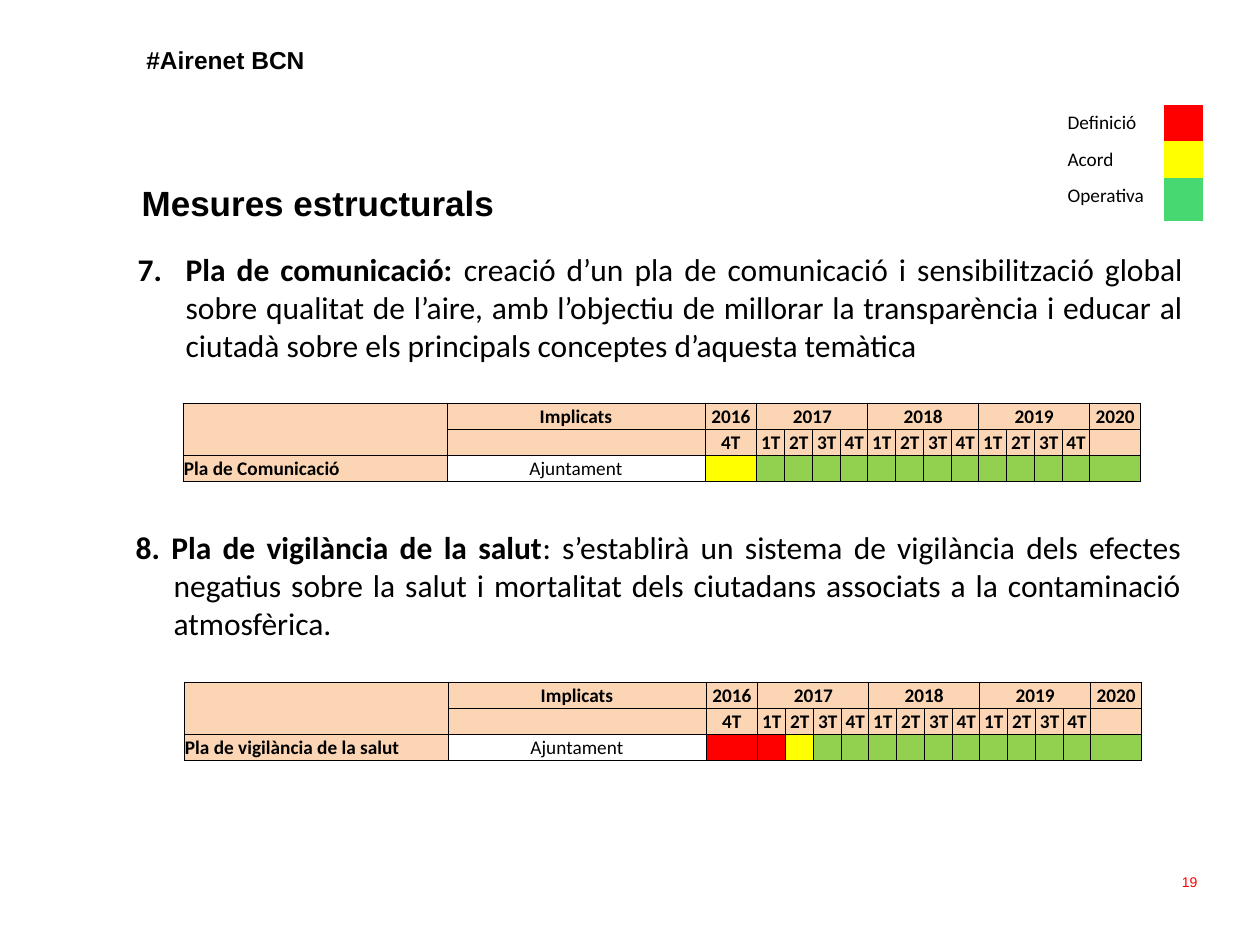
from pptx import Presentation
from pptx.dml.color import RGBColor as Rgb
from pptx.enum.text import MSO_ANCHOR as Anchor, MSO_AUTO_SIZE as Auto, PP_ALIGN as Align
from pptx.oxml.ns import qn
from pptx.util import Emu, Pt
from lxml.etree import SubElement as Sub

HUES = {"ink": "000000", "red": "FF0000", "yellow": "FFFF00", "mint": "47D872",
        "green": "92D050", "peach": "FCD5B4"}
PLAIN = "{2D5ABB26-0587-4C30-8999-92F81FD0307C}"

HEAD = "#Airenet BCN"
TITLE = "Mesures estructurals"
PAGE = "19"
KEY = [("Definició", "red"), ("Acord", "yellow"), ("Operativa", "mint")]
ITEMS = [
    {"box": (125, 244, 1071, 204), "hang": 48, "start": 7, "runs": [
        ("Pla de comunicació: ", True),
        ("creació d’un pla de comunicació i sensibilització global sobre qualitat de l’aire, "
         "amb l’objectiu de millorar la transparència i educar al ciutadà sobre els principals "
         "conceptes d’aquesta temàtica", False)]},
    {"box": (123, 522, 1071, 165), "hang": 38, "start": None, "runs": [
        ("8. Pla de vigilància de la salut", True),
        (": s’establirà un sistema de vigilància dels efectes negatius sobre la salut i "
         "mortalitat dels ciutadans associats a la contaminació atmosfèrica.", False)]},
]
PLANS = [
    {"at": (183, 403), "name": "Pla de Comunicació", "who": "Ajuntament",
     "steps": ["yellow"] + ["green"] * 13},
    {"at": (184, 682), "name": "Pla de vigilància de la salut", "who": "Ajuntament",
     "steps": ["red"] * 2 + ["yellow"] + ["green"] * 11},
]
YEARS = ["2017", "2018", "2019"]
TERMS = ["1T", "2T", "3T", "4T"]
WIDE = [264, 258, 52] + [28, 28, 28, 27] * len(YEARS) + [51]
ROW = 26


def px(n):
    return Emu(round(n * 914400 / 126))


def write(para, runs, size, face, hue="ink"):
    for text, bold in runs:
        run = para.add_run()
        run.text = text
        font = run.font
        font.size, font.name, font.bold = Pt(size), face, bold
        font.color.rgb = Rgb.from_string(HUES[hue])


def place(shape, box, anchor=Anchor.TOP):
    shape.left, shape.top, shape.width, shape.height = map(px, box)
    frame = shape.text_frame
    frame.word_wrap = True
    frame.auto_size = Auto.NONE
    frame.vertical_anchor = anchor
    return frame.paragraphs[0]


def label(shape, box, text, size):
    para = place(shape, box)
    para.alignment = Align.LEFT
    para.line_spacing = Pt(24)
    write(para, [(text, True)], size, "Arial")


def grid(slide, at, rows, cols):
    frame = slide.shapes.add_table(len(rows), len(cols), *map(px, (*at, sum(cols), sum(rows))))
    table = frame.table
    table.first_row = table.horz_banding = False
    table._tbl.tblPr.find(qn("a:tableStyleId")).text = PLAIN
    for row, high in zip(table.rows, rows):
        row.height = px(high)
    for col, wide in zip(table.columns, cols):
        col.width = px(wide)
    return table


def paint(cell, text="", hue=None, bold=False, align=Align.LEFT):
    if hue:
        cell.fill.solid()
        cell.fill.fore_color.rgb = Rgb.from_string(HUES[hue])
    else:
        cell.fill.background()
    para = cell.text_frame.paragraphs[0]
    para.alignment = align
    if text:
        write(para, [(text, bold)], 11, "Calibri")
    else:
        Sub(para._p, qn("a:endParaRPr"), sz="1100")


def edge(cell):
    props = cell._tc.get_or_add_tcPr()
    for side in ("lnL", "lnR", "lnT", "lnB"):
        line = Sub(props, qn("a:" + side), w=str(Pt(0.5)))
        Sub(Sub(line, qn("a:solidFill")), qn("a:srgbClr"), val=HUES["ink"])


def chart(slide, plan):
    table = grid(slide, plan["at"], [ROW] * 3, WIDE)
    gap = [""] * (len(TERMS) - 1)
    tops = ["", "Implicats", "2016"] + [t for y in YEARS for t in [y, *gap]] + ["2020"]
    terms = ["", "", "4T"] + TERMS * len(YEARS) + [""]
    last = [plan["name"], plan["who"]] + [""] * len(plan["steps"])
    hues = [["peach"] * len(WIDE)] * 2 + [["peach", None] + plan["steps"]]
    for r, texts in enumerate([tops, terms, last]):
        for c, text in enumerate(texts):
            cell = table.cell(r, c)
            edge(cell)
            cell.margin_left = cell.margin_right = cell.margin_top = px(1)
            cell.margin_bottom = 0
            cell.vertical_anchor = Anchor.BOTTOM
            paint(cell, text, hues[r][c], (r, c) != (2, 1), Align.CENTER if c else Align.LEFT)
    table.cell(0, 0).merge(table.cell(1, 0))
    for k in range(len(YEARS)):
        c = 3 + k * len(TERMS)
        table.cell(0, c).merge(table.cell(0, c + len(TERMS) - 1))


def main():
    deck = Presentation()
    deck.slide_width, deck.slide_height = px(1260), px(945)
    slide = deck.slides.add_slide(deck.slide_layouts[3])
    title, *bodies = slide.placeholders
    add = slide.shapes.add_textbox

    label(add(0, 0, 0, 0), (134, 26, 591, 118), HEAD, 14)
    label(title, (129, 175, 512, 55), TITLE, 20)
    para = place(add(0, 0, 0, 0), (916, 857, 294, 50), Anchor.MIDDLE)
    para.alignment = Align.RIGHT
    write(para, [(PAGE, False)], 8, "Arial", "red")

    key = grid(slide, (1055, 105), [36, 36, 43], [109, 39])
    for r, (text, hue) in enumerate(KEY):
        paint(key.cell(r, 0), text)
        paint(key.cell(r, 1), hue=hue)

    for body, item in zip(bodies, ITEMS):
        para = place(body, item["box"])
        props = para._p.get_or_add_pPr()
        props.set("marL", str(px(item["hang"])))
        props.set("indent", str(-px(item["hang"])))
        if item["start"]:
            Sub(props, qn("a:buFont"), typeface="+mj-lt")
            Sub(props, qn("a:buAutoNum"), type="arabicPeriod", startAt=str(item["start"]))
        else:
            Sub(props, qn("a:buNone"))
        para.alignment = Align.JUSTIFY
        para.space_before = Pt(0)
        write(para, item["runs"], 18, "Calibri")

    for plan in PLANS:
        chart(slide, plan)
    deck.save("out.pptx")


if __name__ == "__main__":
    main()
